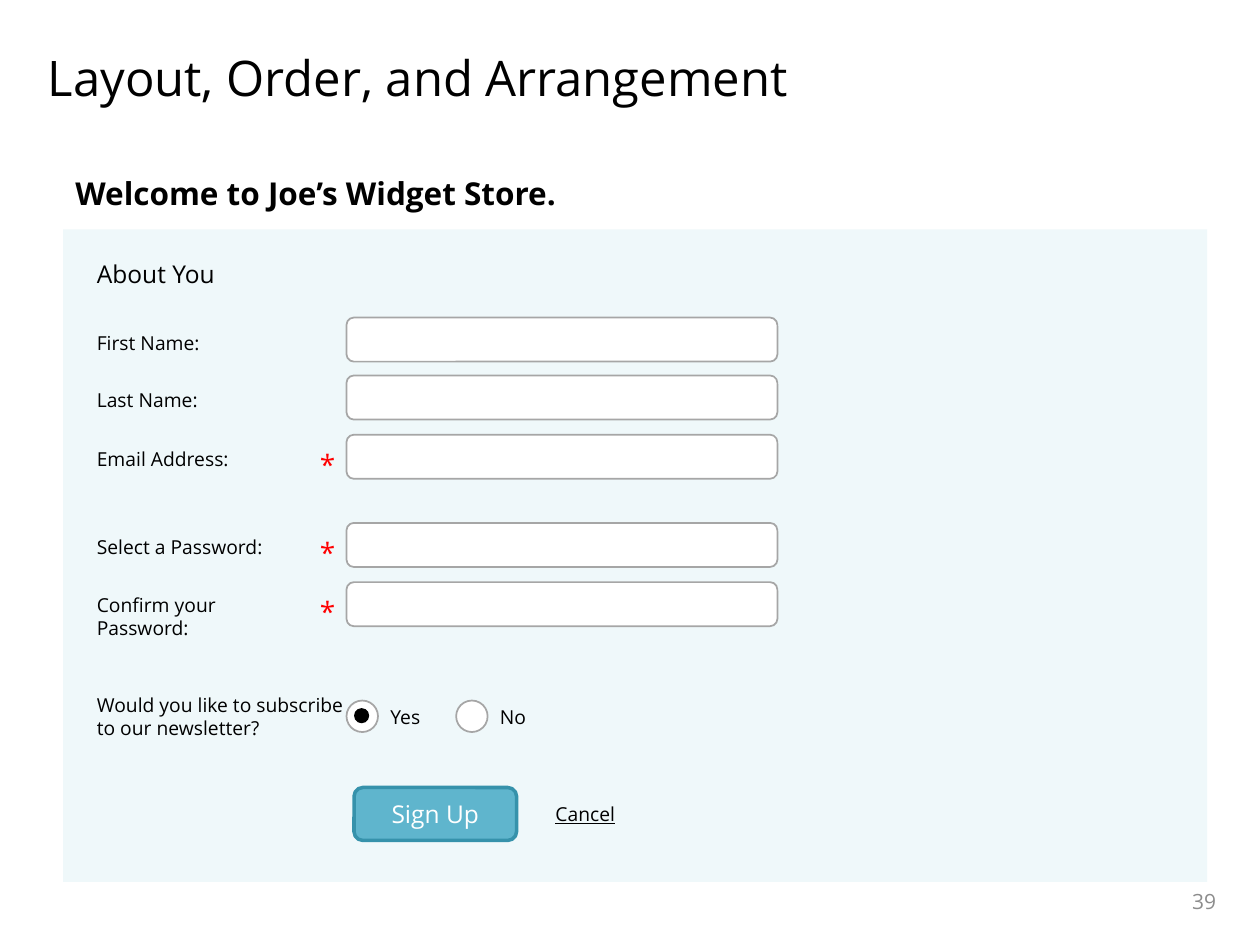
import pptx
import pptx.util
import pptx.dml.color
import pptx.enum.shapes
import pptx.enum.text

Inches = pptx.util.Inches
Pt = pptx.util.Pt
RGBColor = pptx.dml.color.RGBColor
Shape = pptx.enum.shapes.MSO_SHAPE
Anchor = pptx.enum.text.MSO_ANCHOR
Align = pptx.enum.text.PP_ALIGN

BLACK = RGBColor(0x00, 0x00, 0x00)
WHITE = RGBColor(0xFF, 0xFF, 0xFF)
GRAY = RGBColor(0x8C, 0x8C, 0x8C)
BORDER = RGBColor(0xA6, 0xA6, 0xA6)
PANEL = RGBColor(0xEF, 0xF8, 0xFA)
BUTTON = RGBColor(0x5F, 0xB5, 0xCD)
BUTTON_EDGE = RGBColor(0x36, 0x92, 0xAB)
RED = RGBColor(0xFF, 0x00, 0x00)
FONT = "Open Sans"

FIELD_LEFT = 2.75
LABEL_LEFT = 0.67


def write_text(shape, text, size=11, color=BLACK, bold=False, underline=False,
               align=Align.LEFT, anchor=Anchor.TOP):
    frame = shape.text_frame
    frame.word_wrap = True
    frame.vertical_anchor = anchor
    paragraph = frame.paragraphs[0]
    paragraph.alignment = align
    run = paragraph.add_run()
    run.text = text
    run.font.name = FONT
    run.font.size = Pt(size)
    run.font.bold = bold
    run.font.underline = underline
    run.font.color.rgb = color


class FormSlide:
    def __init__(self, presentation):
        self.slide = presentation.slides.add_slide(presentation.slide_layouts[5])

    def title(self, text, left, top, width, height):
        title = self.slide.shapes.title
        title.left, title.top = Inches(left), Inches(top)
        title.width, title.height = Inches(width), Inches(height)
        write_text(title, text, size=28)

    def label(self, text, left, top, width, height=0.29, **text_format):
        box = self.slide.shapes.add_textbox(
            Inches(left), Inches(top), Inches(width), Inches(height))
        write_text(box, text, **text_format)

    def block(self, kind, left, top, width, height, fill, line=None, weight=1):
        shape = self.slide.shapes.add_shape(
            kind, Inches(left), Inches(top), Inches(width), Inches(height))
        shape.shadow.inherit = False
        shape.fill.solid()
        shape.fill.fore_color.rgb = fill
        if line is None:
            shape.line.fill.background()
        else:
            shape.line.color.rgb = line
            shape.line.width = Pt(weight)
        return shape

    def field(self, top):
        self.block(Shape.ROUNDED_RECTANGLE, FIELD_LEFT, top, 3.42, 0.35, WHITE, BORDER)

    def required_mark(self, top):
        self.label("*", 2.44, top, 0.27, 0.37, size=16, color=RED)

    def radio(self, text, left, top, selected=False):
        self.label(text, left + 0.25, top - 0.01, 0.46)
        self.block(Shape.OVAL, left, top, 0.25, 0.25, WHITE, BORDER)
        if selected:
            self.block(Shape.OVAL, left + 0.06, top + 0.06, 0.12, 0.12, BLACK)

    def button(self, text, left, top, width, height):
        shape = self.block(Shape.ROUNDED_RECTANGLE, left, top, width, height,
                           BUTTON, BUTTON_EDGE, weight=2)
        write_text(shape, text, size=14, color=WHITE,
                   align=Align.CENTER, anchor=Anchor.MIDDLE)


def main():
    presentation = pptx.Presentation()
    presentation.slide_width = Inches(10)
    presentation.slide_height = Inches(7.5)

    form = FormSlide(presentation)
    form.title("Layout, Order, and Arrangement", 0.28, 0.33, 9.47, 1.08)
    form.label("39", 7.42, 6.95, 2.33, 0.4, size=12, color=GRAY,
               align=Align.RIGHT, anchor=Anchor.MIDDLE)
    form.block(Shape.RECTANGLE, 0.5, 1.82, 9.08, 5.18, PANEL)
    form.label("Welcome to Joe’s Widget Store.", 0.5, 1.33, 5.75, 0.4, size=18, bold=True)
    form.label("About You", LABEL_LEFT, 2.01, 5.75, 0.34, size=14)

    rows = [
        ("First Name:", 2.58, 0.29, 2.52, False),
        ("Last Name:", 3.03, 0.29, 2.98, False),
        ("Email Address:", 3.5, 0.29, 3.45, True),
        ("Select a Password:", 4.2, 0.29, 4.15, True),
        ("Confirm your Password:", 4.66, 0.47, 4.62, True),
    ]
    for text, label_top, label_height, field_top, required in rows:
        form.label(text, LABEL_LEFT, label_top, 1.83, label_height)
        form.field(field_top)
        if required:
            form.required_mark(field_top + 0.05)

    form.label("Would you like to subscribe to our newsletter?", LABEL_LEFT, 5.45, 2.17, 0.47)
    form.radio("Yes", FIELD_LEFT, 5.56, selected=True)
    form.radio("No", 3.62, 5.56)
    form.button("Sign Up", 2.81, 6.25, 1.29, 0.42)
    form.label("Cancel", 4.31, 6.32, 0.77, underline=True)

    presentation.save("out.pptx")


if __name__ == "__main__":
    main()
